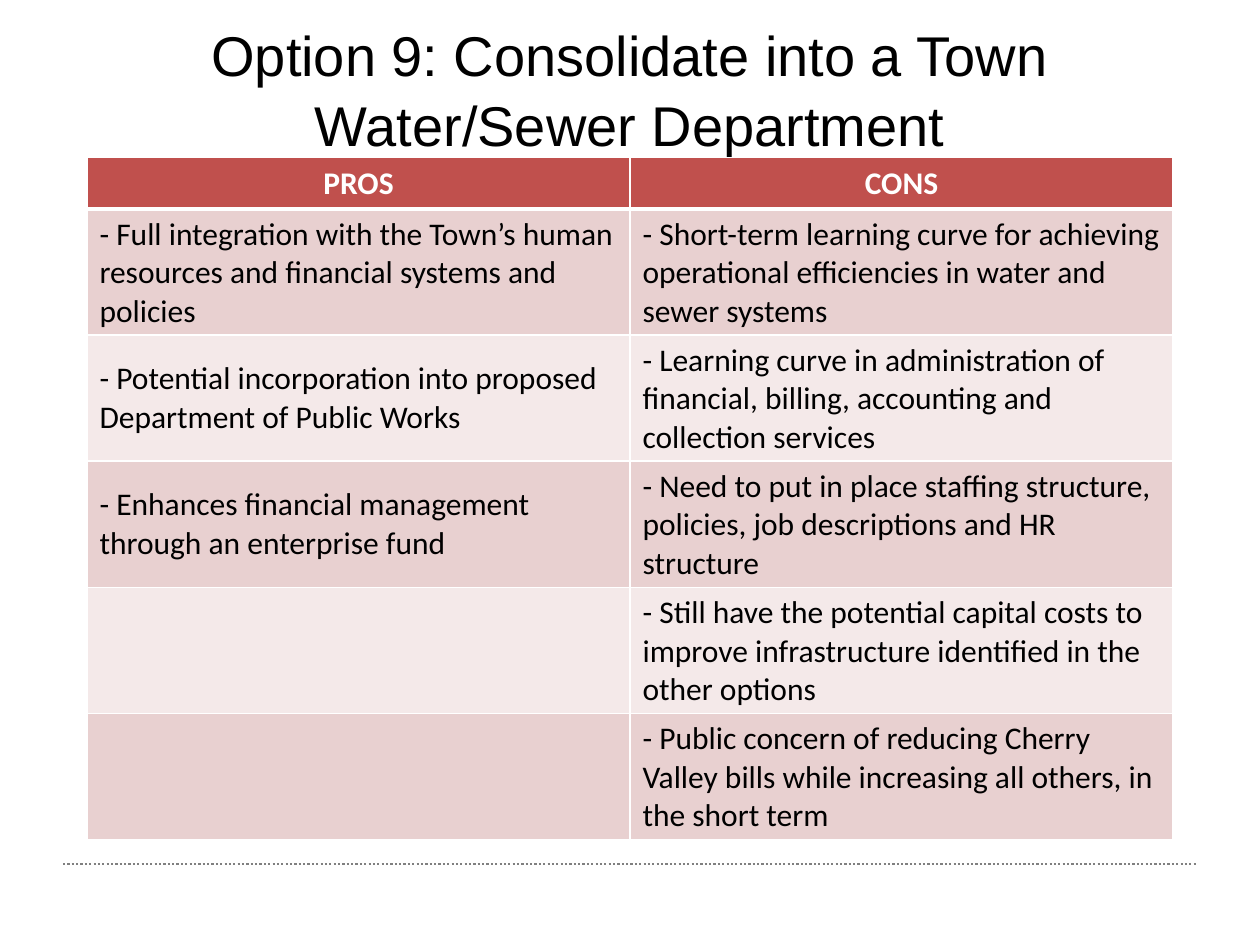
from dataclasses import dataclass

from lxml.etree import SubElement
from pptx import Presentation
from pptx.dml.color import RGBColor
from pptx.enum.dml import MSO_LINE
from pptx.enum.shapes import MSO_CONNECTOR
from pptx.enum.text import MSO_ANCHOR as Anchor, PP_ALIGN as Align
from pptx.oxml.ns import qn
from pptx.util import Inches, Pt

COLORS = {
    "text": "000000",
    "white": "FFFFFF",
    "header": "C0504D",
    "band_dark": "E8D0D0",
    "band_light": "F4E9E9",
    "rule": "808080",
}
WIDTH, HEIGHT = Inches(10), Inches(7.5)
MARGIN = Inches(0.69)
CONTENT_W = WIDTH - 2 * MARGIN
HEADER_H, BODY_H = Inches(0.41), Inches(1)

TITLE = "Option 9: Consolidate into a Town Water/Sewer Department"


@dataclass(frozen=True)
class Row:
    pro: str
    con: str


HEADER = Row("PROS", "CONS")
ROWS = [
    Row("- Full integration with the Town’s human resources and financial systems and policies",
        "- Short-term learning curve for achieving operational efficiencies in water and sewer systems"),
    Row("- Potential incorporation into proposed Department of Public Works",
        "- Learning curve in administration of financial, billing, accounting and collection services"),
    Row("- Enhances financial management through an enterprise fund",
        "- Need to put in place staffing structure, policies, job descriptions and HR structure"),
    Row("", "- Still have the potential capital costs to improve infrastructure identified in the other options"),
    Row("", "- Public concern of reducing Cherry Valley bills while increasing all others, in the short term"),
]


def rgb(name: str) -> RGBColor:
    return RGBColor.from_string(COLORS[name])


def add_run(p, text: str, font: str, size: int, color: str, bold: bool = False) -> None:
    r = p.add_run()
    r.text = text
    r.font.name, r.font.size, r.font.bold = font, Pt(size), bold
    r.font.color.rgb = rgb(color)


def add_title(slide) -> None:
    box = slide.shapes.add_textbox(MARGIN, Inches(0.22), CONTENT_W, Inches(0.95))
    tf = box.text_frame
    tf.word_wrap = True
    tf.vertical_anchor = Anchor.MIDDLE
    p = tf.paragraphs[0]
    p.alignment = Align.CENTER
    p.line_spacing = 1.05
    add_run(p, TITLE, "Arial", 32, "text")


def add_rule(slide) -> None:
    y = Inches(6.86)
    rule = slide.shapes.add_connector(
        MSO_CONNECTOR.STRAIGHT, int(WIDTH * 0.05), y, int(WIDTH * 0.95), y)
    rule.line.color.rgb = rgb("rule")
    rule.line.width = Pt(1.25)
    rule.line.dash_style = MSO_LINE.ROUND_DOT
    SubElement(rule._element.spPr, qn("a:effectLst"))


def set_borders(cell, top: int, bottom: int) -> None:
    """Draw white borders, with widths in points; the sides are 1 pt."""
    tc_pr = cell._tc.get_or_add_tcPr()
    for side, width in (("L", 1), ("R", 1), ("T", top), ("B", bottom)):
        ln = SubElement(tc_pr, qn(f"a:ln{side}"), w=str(Pt(width)))
        fill = SubElement(ln, qn("a:solidFill"))
        SubElement(fill, qn("a:srgbClr"), val=COLORS["white"])


def fill_cell(cell, text: str, row: int) -> None:
    is_header = row == 0
    set_borders(cell, top=3 if row == 1 else 1, bottom=3 if is_header else 1)
    band = "band_dark" if row % 2 else "band_light"
    cell.fill.solid()
    cell.fill.fore_color.rgb = rgb("header" if is_header else band)
    cell.vertical_anchor = Anchor.MIDDLE
    p = cell.text_frame.paragraphs[0]
    p.alignment = Align.CENTER if is_header else Align.LEFT
    if text:
        add_run(p, text, "Calibri", 18, "white" if is_header else "text", is_header)


def add_pros_cons(slide) -> None:
    rows = [HEADER, *ROWS]
    table = slide.shapes.add_table(
        len(rows), 2, MARGIN, Inches(1.25), CONTENT_W,
        HEADER_H + BODY_H * len(ROWS)).table
    for i, row in enumerate(rows):
        table.rows[i].height = BODY_H if i else HEADER_H
        for j, text in enumerate((row.pro, row.con)):
            fill_cell(table.cell(i, j), text, i)


def main() -> None:
    prs = Presentation()
    prs.slide_width, prs.slide_height = WIDTH, HEIGHT
    slide = prs.slides.add_slide(prs.slide_layouts[6])
    add_rule(slide)
    add_title(slide)
    add_pros_cons(slide)
    prs.save("out.pptx")


if __name__ == "__main__":
    main()
